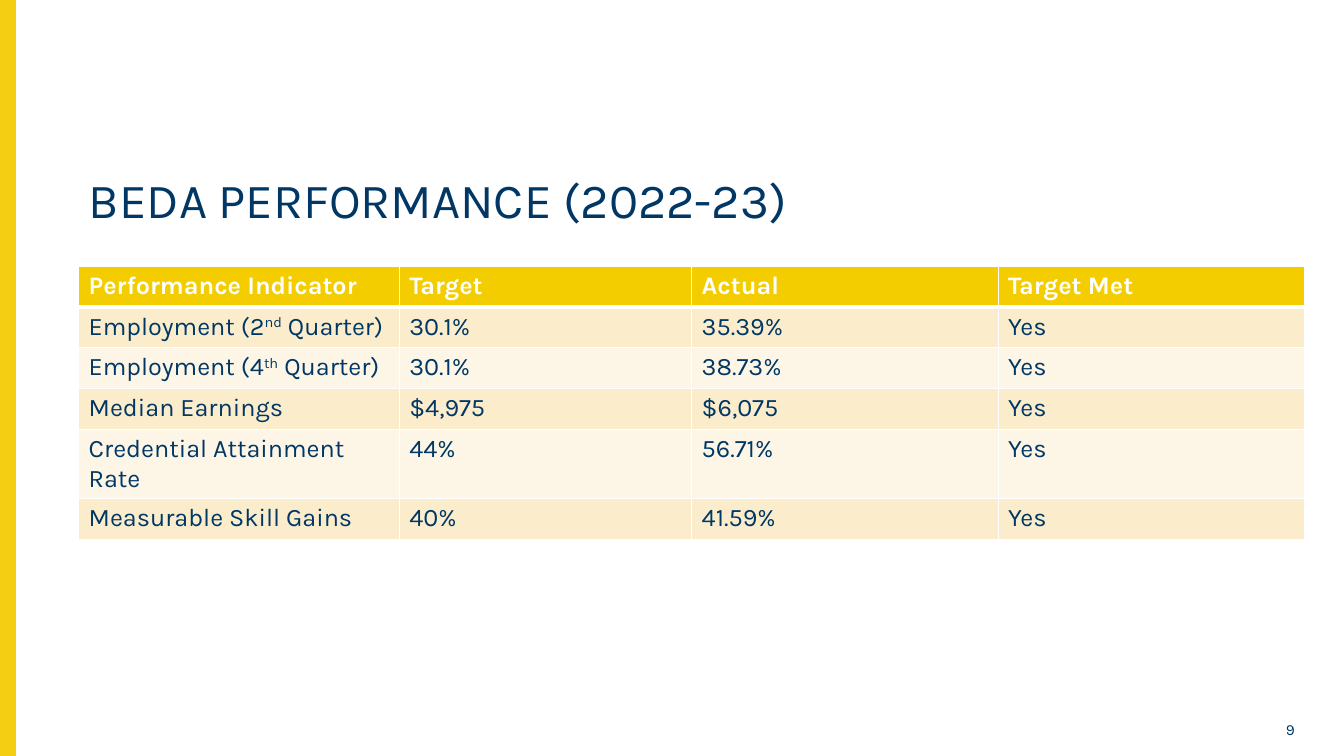
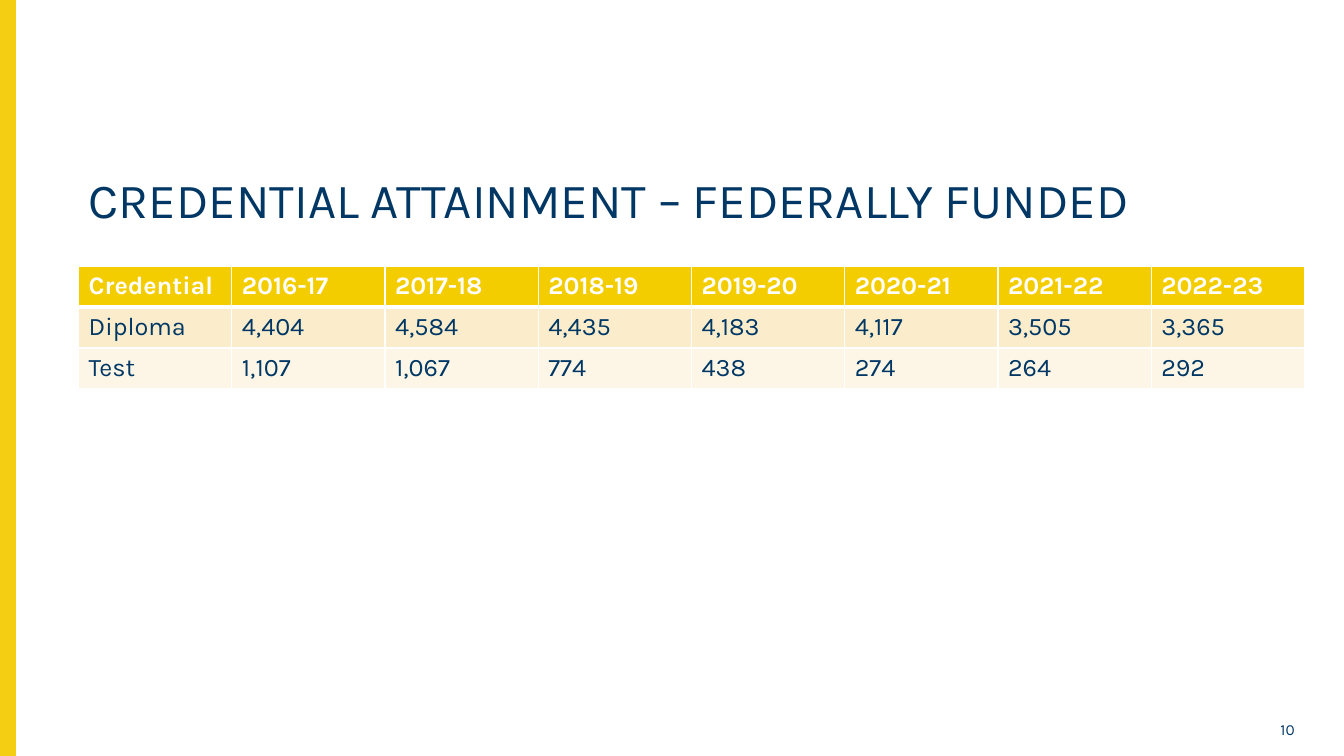
from dataclasses import dataclass

from lxml.etree import SubElement
from pptx import Presentation
from pptx.dml.color import RGBColor as RGB
from pptx.enum.shapes import MSO_SHAPE
from pptx.enum.text import MSO_ANCHOR as ANCHOR, MSO_AUTO_SIZE as AUTOSIZE, PP_ALIGN as ALIGN
from pptx.oxml.ns import qn
from pptx.util import Inches, Pt


@dataclass(frozen=True)
class Theme:
    font: str = "Karla"
    navy: RGB = RGB(0x00, 0x37, 0x64)
    white: RGB = RGB(0xFF, 0xFF, 0xFF)
    band: RGB = RGB(0xF4, 0xCE, 0x12)
    header: RGB = RGB(0xF4, 0xCD, 0x00)
    stripes: tuple = (RGB(0xFB, 0xED, 0xCC), RGB(0xFD, 0xF6, 0xE7))
    title_size: Pt = Pt(35)
    table_size: Pt = Pt(18)
    number_size: Pt = Pt(11)
    thin_rule: Pt = Pt(1)
    thick_rule: Pt = Pt(3)


THEME = Theme()
SLIDE_SIZE = (Inches(13.33), Inches(7.5))
BAND_WIDTH = Inches(0.15)
TITLE_BOX = (Inches(0.78), Inches(1.7), Inches(12.16), Inches(0.87))
NUMBER_BOX = (Inches(12.26), Inches(7.09), Inches(0.68), Inches(0.26))
TABLE_LEFT, TABLE_TOP, TABLE_WIDTH = Inches(0.78), Inches(2.64), Inches(12.16)

# Text between carets is set as superscript.
TABLE_SLIDES = [
    {
        "title": "BEDA PERFORMANCE (2022-23)",
        "number": 9,
        "height": Inches(2.43),
        "columns": [3.18, 2.9, 3.04, 3.04],
        "rows": [
            ["Performance Indicator", "Target", "Actual", "Target Met"],
            ["Employment (2^nd^ Quarter)", "30.1%", "35.39%", "Yes"],
            ["Employment (4^th^ Quarter)", "30.1%", "38.73%", "Yes"],
            ["Median Earnings", "$4,975", "$6,075", "Yes"],
            ["Credential Attainment Rate", "44%", "56.71%", "Yes"],
            ["Measurable Skill Gains", "40%", "41.59%", "Yes"],
        ],
    },
    {
        "title": "CREDENTIAL ATTAINMENT – FEDERALLY FUNDED",
        "number": 10,
        "height": Inches(1.22),
        "columns": [1.52] * 8,
        "rows": [
            ["Credential", "2016-17", "2017-18", "2018-19",
             "2019-20", "2020-21", "2021-22", "2022-23"],
            ["Diploma", "4,404", "4,584", "4,435", "4,183", "4,117", "3,505", "3,365"],
            ["Test", "1,107", "1,067", "774", "438", "274", "264", "292"],
        ],
    },
]


def set_attributes(target, values):
    for name, value in values.items():
        setattr(target, name, value)


def style_font(font, size, color, bold=False):
    set_attributes(font, {"name": THEME.font, "size": size, "bold": bold})
    font.color.rgb = color


def place(shape, box):
    set_attributes(shape, dict(zip(("left", "top", "width", "height"), box)))


def move_band_to_layout(slide):
    """Draw the side band and hand it to the layout, behind its placeholders."""
    band = slide.shapes.add_shape(MSO_SHAPE.RECTANGLE, 0, 0, BAND_WIDTH, SLIDE_SIZE[1])
    band.shadow.inherit = False
    band.fill.solid()
    band.fill.fore_color.rgb = THEME.band
    band.line.color.rgb = THEME.band
    band.line.width = THEME.thin_rule
    slide.slide_layout.shapes.element.insert(2, band.element)


def write_title(title, text):
    frame = title.text_frame
    set_attributes(frame, {"text": text, "word_wrap": True, "auto_size": AUTOSIZE.NONE,
                           "vertical_anchor": ANCHOR.TOP})
    heading = frame.paragraphs[0]
    set_attributes(heading, {"alignment": ALIGN.LEFT, "line_spacing": 0.9})
    style_font(heading.runs[0].font, THEME.title_size, THEME.navy)


def add_slide_number(slide, number, box):
    frame = slide.shapes.add_textbox(*box).text_frame
    set_attributes(frame, {"text": str(number), "word_wrap": True,
                           "vertical_anchor": ANCHOR.TOP})
    frame.paragraphs[0].alignment = ALIGN.RIGHT
    style_font(frame.paragraphs[0].runs[0].font, THEME.number_size, THEME.navy)


def add_borders(cell, row):
    widths = dict.fromkeys(("lnL", "lnR", "lnT", "lnB"), THEME.thin_rule)
    if row < 2:
        widths["lnT" if row else "lnB"] = THEME.thick_rule
    properties = cell._tc.get_or_add_tcPr()
    for side, width in widths.items():
        rule = SubElement(properties, qn(f"a:{side}"), w=str(int(width)))
        fill = SubElement(rule, qn("a:solidFill"))
        SubElement(fill, qn("a:srgbClr"), val=str(THEME.white))


def fill_cell(cell, text, row):
    add_borders(cell, row)
    is_header = row == 0
    cell.fill.solid()
    cell.fill.fore_color.rgb = THEME.header if is_header else THEME.stripes[(row - 1) % 2]
    paragraph = cell.text_frame.paragraphs[0]
    for index, part in enumerate(text.split("^")):
        run = paragraph.add_run()
        run.text = part
        style_font(run.font, THEME.table_size,
                   THEME.white if is_header else THEME.navy, is_header)
        if index % 2:
            run._r.get_or_add_rPr().set("baseline", "30000")


def add_data_table(slide, rows, columns, box):
    table = slide.shapes.add_table(len(rows), len(columns), *box).table
    for column, width in zip(table.columns, columns):
        column.width = Inches(width)
    for row, texts in enumerate(rows):
        for column, text in enumerate(texts):
            fill_cell(table.cell(row, column), text, row)


def fill_table_slide(slide, content):
    write_title(slide.shapes.title, content["title"])
    add_data_table(slide, content["rows"], content["columns"],
                   (TABLE_LEFT, TABLE_TOP, TABLE_WIDTH, content["height"]))
    add_slide_number(slide, content["number"], NUMBER_BOX)


def main():
    deck = Presentation()
    deck.slide_width, deck.slide_height = SLIDE_SIZE
    layout = deck.slide_layouts.get_by_name("Title Only")
    place(layout.placeholders[0], TITLE_BOX)
    slides = [deck.slides.add_slide(layout) for _ in TABLE_SLIDES]
    move_band_to_layout(slides[0])
    for slide, content in zip(slides, TABLE_SLIDES):
        fill_table_slide(slide, content)
    deck.save("out.pptx")


if __name__ == "__main__":
    main()
